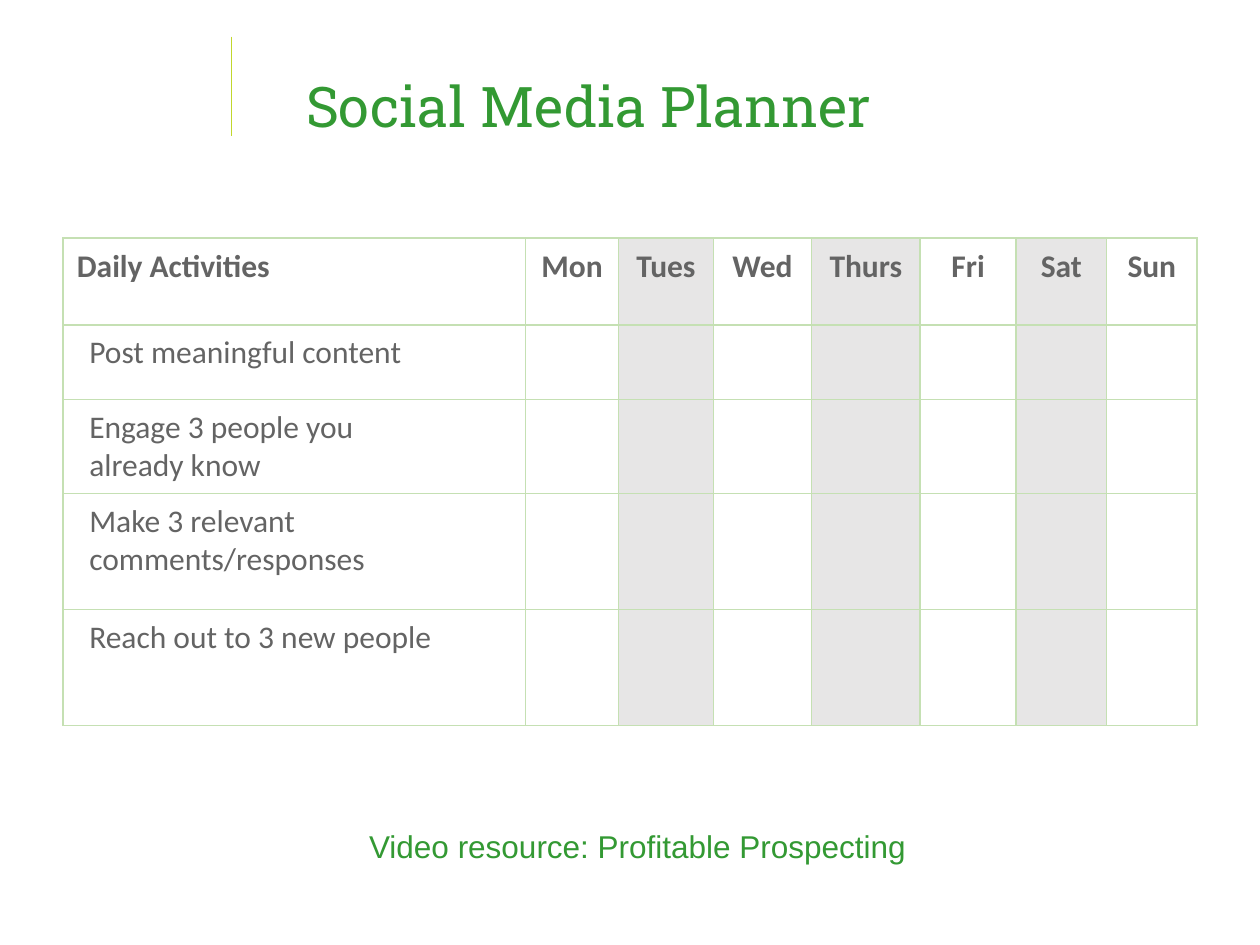
import pptx
import pptx.dml.color
import pptx.enum.shapes
import pptx.enum.text
import pptx.oxml.ns
import pptx.util
from lxml import etree

Cm = pptx.util.Cm
Pt = pptx.util.Pt
RGBColor = pptx.dml.color.RGBColor
PP_ALIGN = pptx.enum.text.PP_ALIGN
MSO_ANCHOR = pptx.enum.text.MSO_ANCHOR
qn = pptx.oxml.ns.qn

GREEN = RGBColor(0x33, 0x99, 0x33)
LIME = RGBColor(0xC1, 0xD7, 0x2D)
PALE_GREEN = RGBColor(0xC5, 0xE0, 0xB3)
SHADE = RGBColor(0xE7, 0xE6, 0xE6)
GREY = RGBColor(0x64, 0x64, 0x64)

DAYS = ["Mon", "Tues", "Wed", "Thurs", "Fri", "Sat", "Sun"]
SHADED_DAYS = {"Tues", "Thurs", "Sat"}
HEADINGS = ["Daily Activities"] + DAYS
ACTIVITIES = [
    "Post meaningful content",
    "Engage 3 people you\valready know",
    "Make 3 relevant comments/responses",
    "Reach out to 3 new people",
]
COLUMN_WIDTHS = [9.32, 1.88, 1.91, 1.98, 2.19, 1.93, 1.83, 1.82]
ROW_HEIGHTS = [1.75, 1.5, 1.9, 2.34, 2.34]


def style_font(paragraph, name, size, color, bold=False):
    paragraph.font.name = name
    paragraph.font.size = Pt(size)
    paragraph.font.color.rgb = color
    paragraph.font.bold = bold


def add_accent_line(slide):
    accent = slide.shapes.add_connector(
        pptx.enum.shapes.MSO_CONNECTOR.STRAIGHT,
        Cm(4.67), Cm(0.74), Cm(4.67), Cm(2.74))
    accent.line.color.rgb = LIME
    accent.line.width = Pt(0.75)
    etree.SubElement(accent._element.spPr, qn("a:effectLst"))


def add_label(slide, text, left, top, width, height, font, size):
    frame = slide.shapes.add_textbox(
        Cm(left), Cm(top), Cm(width), Cm(height)).text_frame
    frame.word_wrap = True
    paragraph = frame.paragraphs[0]
    paragraph.text = text
    style_font(paragraph, font, size, GREEN)
    return frame


def add_borders(cell):
    properties = cell._tc.get_or_add_tcPr()
    for side in ("a:lnL", "a:lnR", "a:lnT", "a:lnB"):
        border = etree.SubElement(properties, qn(side), w=str(Pt(1)))
        fill = etree.SubElement(border, qn("a:solidFill"))
        etree.SubElement(fill, qn("a:srgbClr"), val=str(PALE_GREEN))


def fill_cell(cell, text, is_heading, is_day, shaded):
    cell.margin_left = cell.margin_right = Cm(0.28)
    cell.margin_top = cell.margin_bottom = Cm(0.18)
    paragraph = cell.text_frame.paragraphs[0]
    paragraph.text = text
    if is_day:
        paragraph.alignment = PP_ALIGN.CENTER
    elif not is_heading:
        paragraph._p.get_or_add_pPr().set("marL", str(Cm(0.25)))
    style_font(paragraph, "Calibri", 18, GREY, is_heading)
    add_borders(cell)
    if shaded:
        cell.fill.solid()
        cell.fill.fore_color.rgb = SHADE
    else:
        cell.fill.background()


def add_planner(slide):
    rows = [HEADINGS] + [[activity] + [""] * len(DAYS) for activity in ACTIVITIES]
    planner = slide.shapes.add_table(
        len(rows), len(HEADINGS), Cm(1.27), Cm(4.8),
        Cm(sum(COLUMN_WIDTHS)), Cm(sum(ROW_HEIGHTS))).table
    planner.horz_banding = False
    planner.first_row = False
    for column, width in zip(planner.columns, COLUMN_WIDTHS):
        column.width = Cm(width)
    for row, height in zip(planner.rows, ROW_HEIGHTS):
        row.height = Cm(height)
    for r, texts in enumerate(rows):
        for c, text in enumerate(texts):
            fill_cell(planner.cell(r, c), text, r == 0, c > 0,
                      HEADINGS[c] in SHADED_DAYS)


def main():
    presentation = pptx.Presentation()
    presentation.slide_width = Cm(25.4)
    presentation.slide_height = Cm(19.05)
    slide = presentation.slides.add_slide(presentation.slide_layouts[6])
    add_accent_line(slide)
    title = add_label(slide, "Social Media Planner",
                      5.92, 0.64, 19.28, 3.18, "Roboto Slab", 32)
    title.vertical_anchor = MSO_ANCHOR.MIDDLE
    title.paragraphs[0].line_spacing = Pt(32)
    add_planner(slide)
    add_label(slide, "Video resource: Profitable Prospecting",
              7.19, 16.54, 16.71, 1.02, "Arial", 18)
    presentation.save("out.pptx")


if __name__ == "__main__":
    main()
